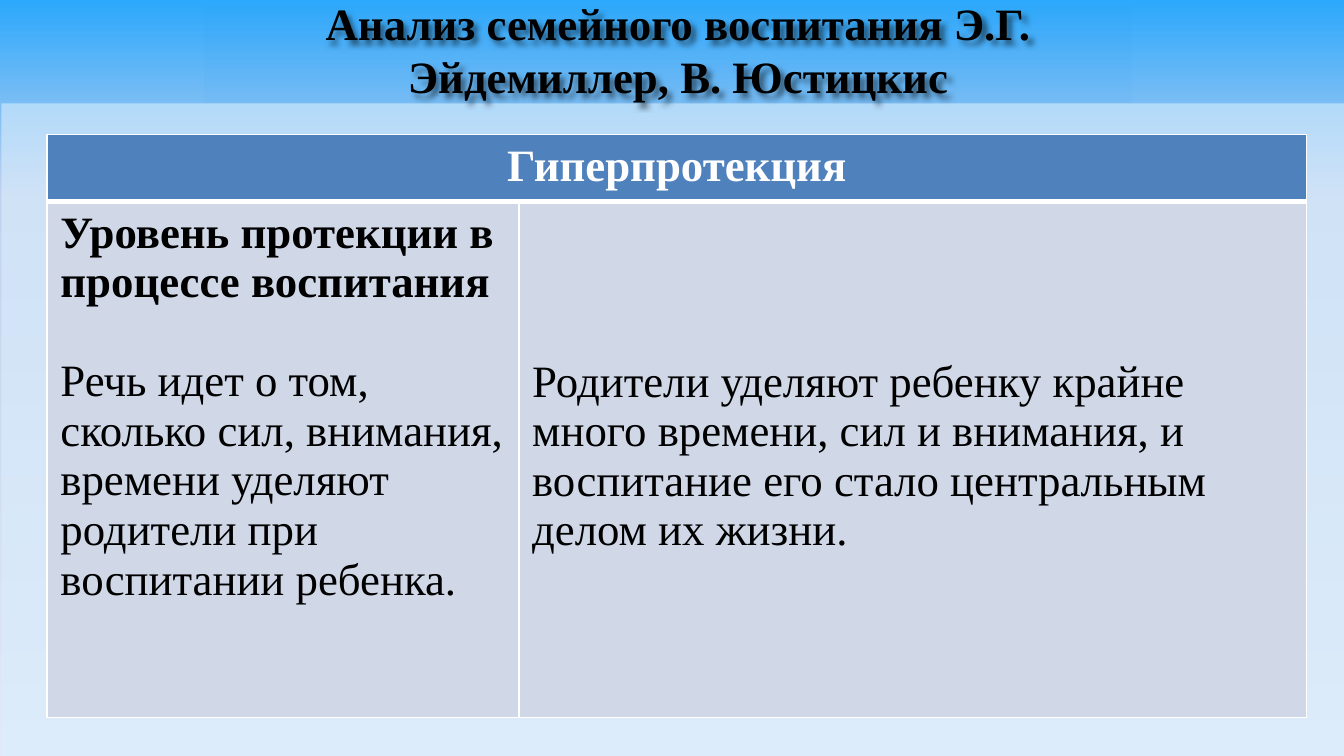
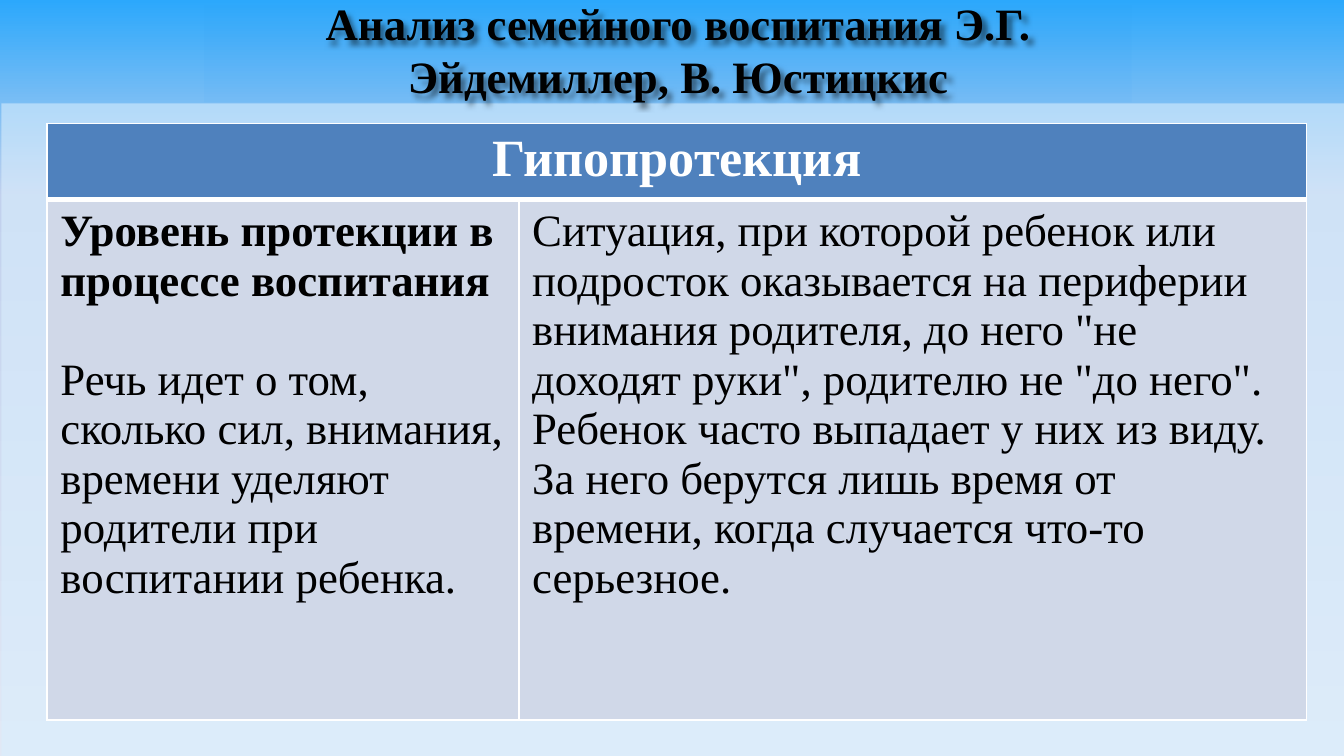
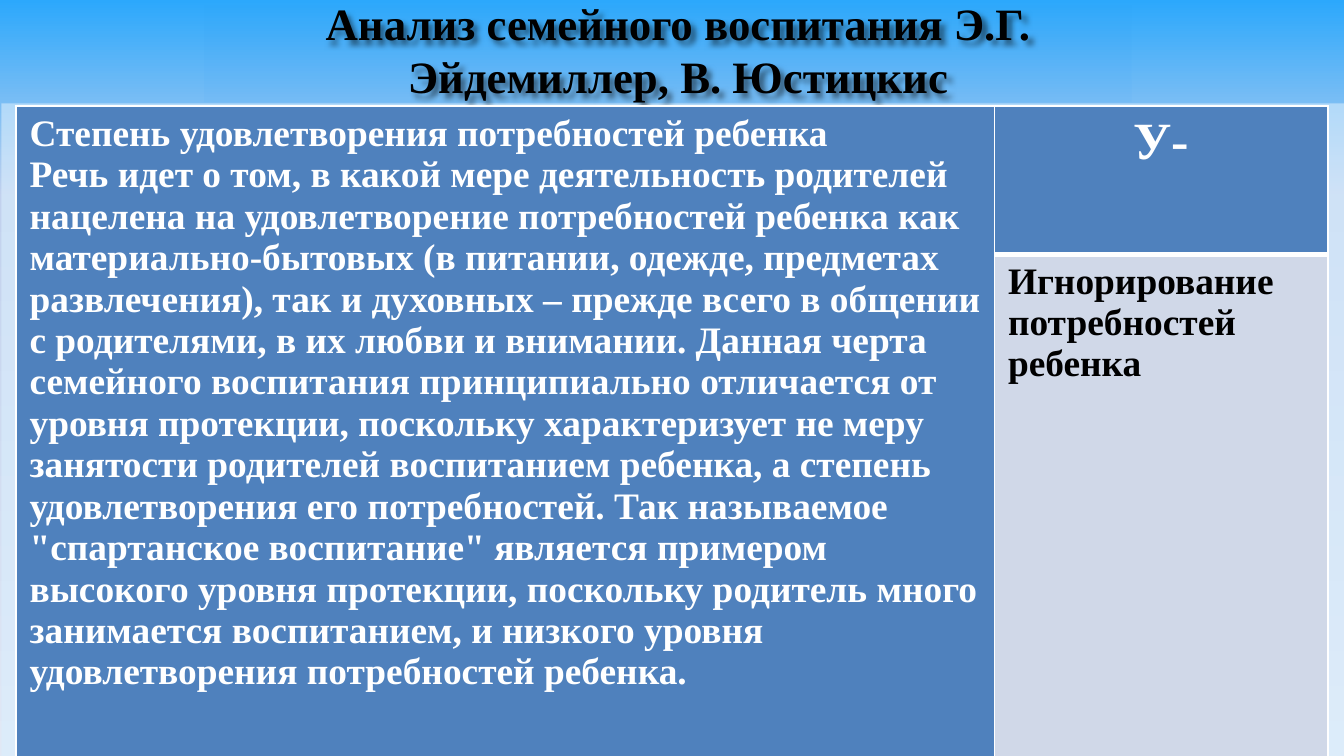
from lxml import etree
from pptx import Presentation
from pptx.dml.color import RGBColor
from pptx.enum.shapes import MSO_SHAPE
from pptx.enum.text import MSO_ANCHOR, PP_ALIGN
from pptx.oxml.ns import qn
from pptx.util import Inches, Pt

RECTANGLE = MSO_SHAPE.RECTANGLE
CENTER, LEFT = PP_ALIGN.CENTER, PP_ALIGN.LEFT
MIDDLE = MSO_ANCHOR.MIDDLE

FONT = "Times New Roman"
BLACK, WHITE = "000000", "FFFFFF"
HEADER_BLUE, BODY_BLUE = "4F81BD", "D0D8E8"
SKY = [(0, "2CA8FC"), (26, "C2D1ED"), (100, "E1E8F5")]
PANEL, PANEL_BOX = "DAEFFE", (0.01, 0.77, 9.99, 4.86)
BAND, BAND_BOX = "299AF7", (1.52, 0.04, 6.9, 0.72)
TITLE_BOX = (1.46, 0.14, 7.17, 0.46)
TITLE = "Анализ семейного воспитания Э.Г. Эйдемиллер, В. Юстицкис"
PROTECTION_LEVEL = [
    ("Уровень протекции в процессе воспитания", True),
    ("Речь идет о том, сколько сил, внимания, времени уделяют родители "
     "при воспитании ребенка.", False),
]
HYPERPROTECTION = (
    "Родители уделяют ребенку крайне много времени, сил и внимания, "
    "и воспитание его стало центральным делом их жизни.")
HYPOPROTECTION = (
    "Ситуация, при которой ребенок или подросток оказывается на периферии "
    "внимания родителя, до него \"не доходят руки\", родителю не \"до него\". "
    "Ребенок часто выпадает у них из виду. За него берутся лишь время от "
    "времени, когда случается что-то серьезное.")
NEEDS = [
    ("Степень удовлетворения потребностей ребенка", True),
    ("Речь идет о том, в какой мере деятельность родителей нацелена на "
     "удовлетворение потребностей ребенка как материально-бытовых (в питании, "
     "одежде, предметах развлечения), так и духовных – прежде всего в общении "
     "с родителями, в их любви и внимании. Данная черта семейного воспитания "
     "принципиально отличается от уровня протекции, поскольку характеризует "
     "не меру занятости родителей воспитанием ребенка, а степень "
     "удовлетворения его потребностей. Так называемое \"спартанское "
     "воспитание\" является примером высокого уровня протекции, поскольку "
     "родитель много занимается воспитанием, и низкого уровня удовлетворения "
     "потребностей ребенка.", True),
]


def rgb(value):
    """Turn a hex string into a colour."""
    return RGBColor.from_string(value)


def add_color(parent, value, opacity=100):
    """Append a colour element with its opacity in percent."""
    color = etree.SubElement(parent, qn("a:srgbClr"), val=value)
    if opacity < 100:
        etree.SubElement(color, qn("a:alpha"), val=str(opacity * 1000))


def paint_sky(slide):
    """Give the slide its vertical gradient."""
    fill = slide.background.fill
    fill.gradient()
    fill.gradient_angle = 270
    stops = next(slide.element.iter(qn("a:gsLst")))
    for stop in list(stops):
        stops.remove(stop)
    for position, value in SKY:
        add_color(etree.SubElement(stops, qn("a:gs"), pos=str(position * 1000)), value)


def add_veil(slide, box, value, opacity):
    """Add a translucent rectangle without outline."""
    veil = slide.shapes.add_shape(RECTANGLE, *map(Inches, box))
    veil.shadow.inherit = False
    veil.line.fill.background()
    veil.fill.solid()
    veil.fill.fore_color.rgb = rgb(value)
    color = veil.element.spPr.find(qn("a:solidFill"))[0]
    etree.SubElement(color, qn("a:alpha"), val=str(opacity * 1000))


def style(paragraph, size, color, bold, align=LEFT):
    """Format every run of a paragraph."""
    paragraph.alignment = align
    for run in paragraph.runs:
        run.font.name = FONT
        run.font.size = Pt(size)
        run.font.bold = bold
        run.font.color.rgb = rgb(color)


def add_title(slide, box):
    """Add the shared title with its soft shadow."""
    title = slide.shapes.add_textbox(*map(Inches, box))
    frame = title.text_frame
    frame.word_wrap = True
    frame.vertical_anchor = MIDDLE
    frame.text = TITLE
    style(frame.paragraphs[0], 24, BLACK, True, CENTER)
    frame.paragraphs[0].line_spacing = Pt(28.4)
    effects = etree.SubElement(title.element.spPr, qn("a:effectLst"))
    shadow = etree.SubElement(effects, qn("a:outerShdw"), blurRad=str(Pt(3)),
                              dist=str(Pt(3)), dir="2700000", algn="tl")
    add_color(shadow, BLACK, 50)


def paint_cell(cell, header):
    """Draw the white borders and the fill of a cell."""
    properties = cell._tc.get_or_add_tcPr()
    for side in "LRTB":
        width = 3 if header and side == "B" else 1
        line = etree.SubElement(properties, qn(f"a:ln{side}"), w=str(Pt(width)))
        add_color(etree.SubElement(line, qn("a:solidFill")), WHITE)
    cell.fill.solid()
    cell.fill.fore_color.rgb = rgb(HEADER_BLUE if header else BODY_BLUE)


def fill_cell(cell, parts, size, color, align=LEFT, gap=0):
    """Write (text, bold) paragraphs with a gap in points between them."""
    cell.text_frame.text = "\n".join(text for text, _ in parts)
    for index, (paragraph, (_, bold)) in enumerate(zip(cell.text_frame.paragraphs, parts)):
        style(paragraph, size, color, bold, align)
        if index and gap:
            paragraph.space_before = Pt(gap)


def add_grid(slide, left, top, columns, rows, headers):
    """Add a painted table whose header cells are listed by row and column."""
    table = slide.shapes.add_table(len(rows), len(columns), Inches(left), Inches(top),
                                   Inches(sum(columns)), Inches(sum(rows))).table
    table.horz_banding = False
    for column, width in zip(table.columns, columns):
        column.width = Inches(width)
    for row, height in zip(table.rows, rows):
        row.height = Inches(height)
    for row in range(len(rows)):
        for column in range(len(columns)):
            paint_cell(table.cell(row, column), (row, column) in headers)
    return table


def add_analysis_slide(deck):
    """Add a slide with the shared backdrop and title."""
    slide = deck.slides.add_slide(deck.slide_layouts[6])
    paint_sky(slide)
    add_veil(slide, PANEL_BOX, PANEL, 58)
    add_veil(slide, BAND_BOX, BAND, 5)
    add_title(slide, TITLE_BOX)
    return slide


def add_protection_slide(deck, top, rows, heading, heading_size, description, inset=0.05):
    """Add a slide on one level of protection."""
    table = add_grid(add_analysis_slide(deck), 0.35, top, (3.51, 5.86), rows,
                     {(0, 0), (0, 1)})
    table.cell(0, 0).merge(table.cell(0, 1))
    fill_cell(table.cell(0, 0), [(heading, True)], heading_size, WHITE, CENTER)
    fill_cell(table.cell(1, 0), PROTECTION_LEVEL, 24, BLACK, gap=26.6)
    fill_cell(table.cell(1, 1), [(description, False)], 24, BLACK)
    table.cell(1, 1).margin_top = Inches(inset)


def add_needs_slide(deck):
    """Add the slide on satisfying the child's needs."""
    table = add_grid(add_analysis_slide(deck), 0.12, 0.79, (7.28, 2.48), (1.1, 3.73),
                     {(0, 0), (1, 0), (0, 1)})
    table.cell(0, 0).merge(table.cell(1, 0))
    fill_cell(table.cell(0, 0), NEEDS, 20, WHITE)
    fill_cell(table.cell(0, 1), [("У-", True)], 28, WHITE, CENTER)
    fill_cell(table.cell(1, 1), [("Игнорирование потребностей ребенка", True)], 20, BLACK)


def main():
    """Build and save the deck."""
    deck = Presentation()
    deck.slide_width = Inches(10)
    deck.slide_height = deck.slide_width * 9 // 16
    add_protection_slide(deck, 1, (0.49, 3.84), "Гиперпротекция", 24, HYPERPROTECTION, 1.16)
    add_protection_slide(deck, 0.92, (0.52, 3.87), "Гипопротекция", 28, HYPOPROTECTION)
    add_needs_slide(deck)
    deck.save("out.pptx")


if __name__ == "__main__":
    main()
